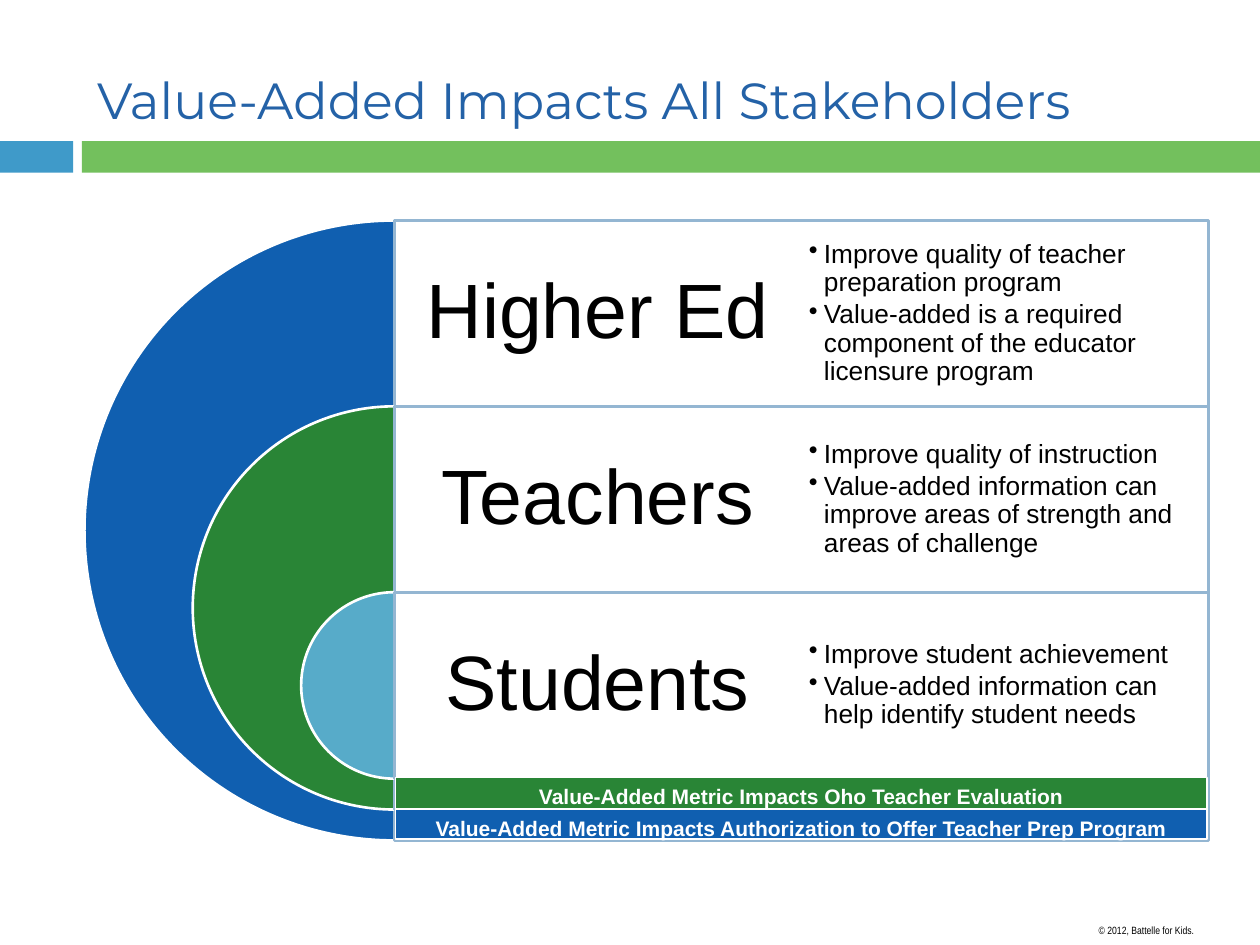
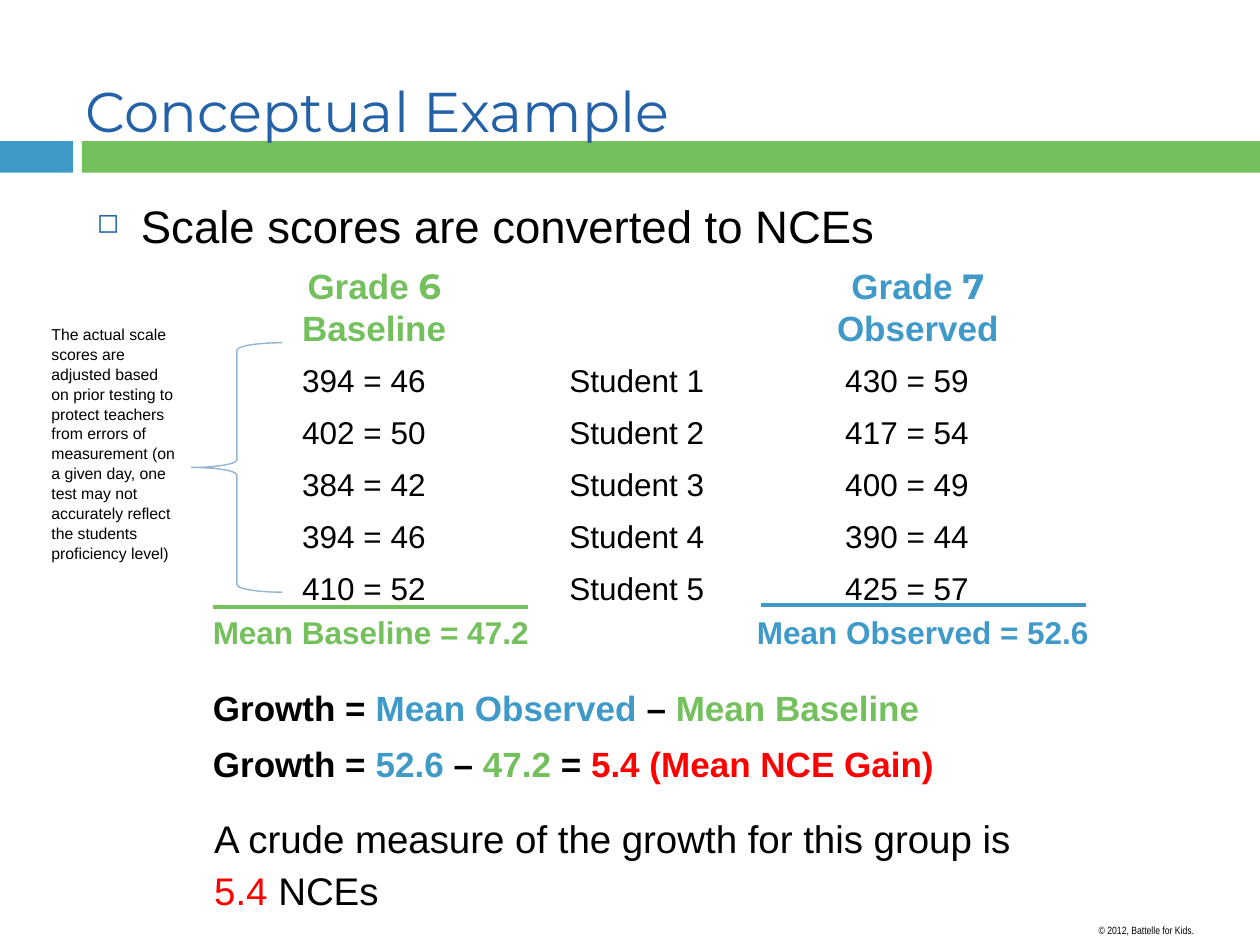
from dataclasses import dataclass, replace
from typing import NamedTuple, Optional

from lxml.etree import SubElement
from pptx import Presentation
from pptx.dml.color import RGBColor
from pptx.enum.shapes import MSO_CONNECTOR, MSO_SHAPE
from pptx.enum.text import MSO_ANCHOR, MSO_AUTO_SIZE, PP_ALIGN
from pptx.oxml.ns import qn
from pptx.util import Inches, Pt

SLIDE_WIDTH, SLIDE_HEIGHT = Inches(10), Inches(7.5)
COLUMN, ROW = SLIDE_WIDTH / 100, SLIDE_HEIGHT / 75

BLACK = RGBColor(0, 0, 0)
WHITE = RGBColor(255, 255, 255)
RED = RGBColor(255, 0, 0)
TITLE_BLUE = RGBColor(0x24, 0x62, 0xA7)
BAND_BLUE = RGBColor(0x3F, 0x9A, 0xC9)
BAND_GREEN = RGBColor(0x73, 0xC0, 0x5D)
DEEP_BLUE = RGBColor(0x10, 0x5F, 0xB0)
DEEP_GREEN = RGBColor(0x29, 0x85, 0x36)
LIGHT_BLUE = RGBColor(0x57, 0xAB, 0xC9)
OUTLINE_BLUE = RGBColor(0x94, 0xB6, 0xD2)


class Box(NamedTuple):
    column: float
    row: float
    columns: float
    rows: float

    def emu(self) -> tuple:
        return (round(self.column * COLUMN), round(self.row * ROW),
                round(self.columns * COLUMN), round(self.rows * ROW))


class Part(NamedTuple):
    text: str
    color: Optional[RGBColor] = None
    font: Optional[str] = None


class Bullet(NamedTuple):
    symbol: str
    indent: float
    color: Optional[RGBColor] = None
    percent: int = 100


class Stakeholder(NamedTuple):
    name: str
    color: RGBColor
    impacts: tuple


class Summary(NamedTuple):
    text: str
    color: RGBColor
    box: Box


class Grade(NamedTuple):
    number: str
    role: str
    mean: str
    color: RGBColor
    heading_box: Box
    mean_box: Box
    rule: tuple


@dataclass(frozen=True)
class Style:
    size: float
    color: RGBColor = BLACK
    bold: bool = False
    font: str = "Arial"
    align: PP_ALIGN = PP_ALIGN.LEFT
    anchor: MSO_ANCHOR = MSO_ANCHOR.TOP
    insets: tuple = (0.1, 0.05, 0.1, 0.05)
    spacing: float = 1.0
    before: float = 0
    after: float = 0
    bullet: Optional[Bullet] = None
    tabs: tuple = ()


FLUSH = (0, 0, 0, 0.05)
TITLE = Style(29, TITLE_BLUE, font="Montserrat", anchor=MSO_ANCHOR.MIDDLE)
COPYRIGHT = Style(6, font="Arial Narrow", insets=(0, 0, 0, 0))
STAKEHOLDER = Style(44, align=PP_ALIGN.CENTER, anchor=MSO_ANCHOR.MIDDLE,
                    insets=(0.18,) * 4, spacing=0.9)
IMPACT = Style(15, anchor=MSO_ANCHOR.MIDDLE, insets=(0.06,) * 4, spacing=0.9,
               after=2.25, bullet=Bullet("•", 0.12))
SUMMARY = Style(12, WHITE, bold=True, align=PP_ALIGN.CENTER)
LEAD = Style(26, spacing=1.05, bullet=Bullet("◻", 0.35, TITLE_BLUE, 60))
SCORES = Style(18, spacing=1.05, before=7, tabs=(2.12, 4.31))
MEAN = Style(18, bold=True, spacing=1.05)
GRADE = Style(20, bold=True, align=PP_ALIGN.CENTER)
GROWTH = Style(20, bold=True, insets=FLUSH, spacing=1.05)
CONCLUSION = Style(22, insets=FLUSH, spacing=1.13)
NOTE = Style(9, spacing=1.05)

CENTER_COLUMN, RIGHT_COLUMN, TOP_ROW = 31.3, 95.9, 17.5
LEVEL_ROWS = 14.75
DIAMETER, DIAMETER_STEP = 49.2, 17.2
HALF_PANEL = (RIGHT_COLUMN - CENTER_COLUMN) / 2

STAKEHOLDERS = (
    Stakeholder("Higher Ed", DEEP_BLUE, (
        "Improve quality of teacher preparation program",
        "Value-added is a required component of the educator licensure program")),
    Stakeholder("Teachers", DEEP_GREEN, (
        "Improve quality of instruction",
        "Value-added information can improve areas of strength and areas of challenge")),
    Stakeholder("Students", LIGHT_BLUE, (
        "Improve student achievement",
        "Value-added information can help identify student needs")),
)
SUMMARIES = (
    Summary("Value-Added Metric Impacts Oho Teacher Evaluation",
            DEEP_GREEN, Box(31.4, 61.7, 64.4, 3)),
    Summary("Value-Added Metric Impacts Authorization to Offer Teacher Prep Program",
            DEEP_BLUE, Box(31.4, 64.2, 64.4, 2.4)),
)
GRADES = (
    Grade("6", "Baseline", "47.2", BAND_GREEN, Box(19.3, 20.5, 20.8, 7.7),
          Box(15.9, 48, 27.5, 4.2), (16.9, 41.9, 48.2)),
    Grade("7", "Observed", "52.6", BAND_BLUE, Box(61.6, 20.5, 22.5, 7.7),
          Box(59.1, 48, 29, 4.2), (60.4, 86.2, 48)),
)
STUDENT_SCORES = (
    ("394 = 46", "430 = 59"),
    ("402 = 50", "417 = 54"),
    ("384 = 42", "400 = 49"),
    ("394 = 46", "390 = 44"),
    ("410 = 52", "425 = 57"),
)
GROWTH_LINES = (
    (Part("Growth = "), Part("Mean Observed ", BAND_BLUE), Part("– "),
     Part("Mean Baseline", BAND_GREEN)),
    (Part("Growth = "), Part("52.6 ", BAND_BLUE), Part("– "), Part("47.2 ", BAND_GREEN),
     Part("= "), Part("5.4 (Mean NCE Gain)", RED)),
)


def add_bullet(properties, bullet: Bullet) -> None:
    indent = Inches(bullet.indent)
    properties.set("marL", str(indent))
    properties.set("indent", str(-indent))
    if bullet.color is not None:
        color = SubElement(properties, qn("a:buClr"))
        SubElement(color, qn("a:srgbClr"), val=str(bullet.color))
    SubElement(properties, qn("a:buSzPct"), val=str(bullet.percent * 1000))
    SubElement(properties, qn("a:buChar"), char=bullet.symbol)


def add_tabs(properties, stops: tuple) -> None:
    tab_list = SubElement(properties, qn("a:tabLst"))
    for stop in stops:
        SubElement(tab_list, qn("a:tab"), pos=str(Inches(stop)), algn="l")


def write(frame, lines, style: Style) -> None:
    frame.word_wrap = True
    frame.auto_size = MSO_AUTO_SIZE.NONE
    frame.vertical_anchor = style.anchor
    (frame.margin_left, frame.margin_top,
     frame.margin_right, frame.margin_bottom) = map(Inches, style.insets)
    for index, line in enumerate(lines):
        paragraph = frame.add_paragraph() if index else frame.paragraphs[0]
        properties = paragraph._p.get_or_add_pPr()
        if style.bullet:
            add_bullet(properties, style.bullet)
        if style.tabs:
            add_tabs(properties, style.tabs)
        paragraph.alignment = style.align
        paragraph.line_spacing = style.spacing
        paragraph.space_before = Pt(style.before if index else 0)
        paragraph.space_after = Pt(style.after)
        paragraph.font.size = Pt(style.size)
        paragraph.font.bold = style.bold
        paragraph.font.name = style.font
        paragraph.font.color.rgb = style.color
        for part in ((Part(line),) if isinstance(line, str) else line):
            run = paragraph.add_run()
            run.text = part.text
            if part.color is not None:
                run.font.color.rgb = part.color
            if part.font:
                run.font.name = part.font


def add_text(slide, box: Box, lines, style: Style):
    text = slide.shapes.add_textbox(*box.emu())
    write(text.text_frame, lines, style)
    return text


def draw(slide, preset: MSO_SHAPE, box: Box, fill: Optional[RGBColor] = None,
         line: Optional[RGBColor] = None, weight: float = 1.5):
    shape = slide.shapes.add_shape(preset, *box.emu())
    shape.shadow.inherit = False
    if fill is None:
        shape.fill.background()
    else:
        shape.fill.solid()
        shape.fill.fore_color.rgb = fill
    if line is None:
        shape.line.fill.background()
    else:
        shape.line.color.rgb = line
        shape.line.width = Pt(weight)
    return shape


def draw_rule(slide, start: float, end: float, row: float, color: RGBColor) -> None:
    x1, y, length, _ = Box(start, row, end - start, 0).emu()
    rule = slide.shapes.add_connector(MSO_CONNECTOR.STRAIGHT, x1, y, x1 + length, y)
    rule.line.color.rgb = color
    rule.line.width = Pt(2.5)
    SubElement(rule._element.spPr, qn("a:effectLst"))


def start_slide(deck, heading: str, box: Box, style: Style):
    slide = deck.slides.add_slide(deck.slide_layouts[5])
    draw(slide, MSO_SHAPE.RECTANGLE, Box(0, 11.2, 5.8, 2.5), BAND_BLUE)
    draw(slide, MSO_SHAPE.RECTANGLE, Box(6.5, 11.2, 93.5, 2.5), BAND_GREEN)
    copyright_line = add_text(slide, Box(87.2, 73.3, 12, 0.8),
                              ["© 2012, Battelle for Kids."], COPYRIGHT)
    title = slide.shapes.title
    title.left, title.top, title.width, title.height = box.emu()
    write(title.text_frame, [heading], style)
    copyright_line.element.addnext(title.element)
    return slide


def draw_level(slide, index: int, stakeholder: Stakeholder) -> None:
    top = TOP_ROW + index * LEVEL_ROWS
    diameter = DIAMETER - index * DIAMETER_STEP
    half_circle = draw(slide, MSO_SHAPE.PIE,
                       Box(CENTER_COLUMN - diameter / 2, top, diameter, diameter),
                       stakeholder.color, WHITE)
    half_circle.adjustments[0], half_circle.adjustments[1] = 54, 162
    panel = draw(slide, MSO_SHAPE.RECTANGLE,
                 Box(CENTER_COLUMN, top, 2 * HALF_PANEL, diameter), WHITE, OUTLINE_BLUE)
    panel_color = panel._element.spPr.find(qn("a:solidFill")).find(qn("a:srgbClr"))
    SubElement(panel_color, qn("a:alpha"), val="90000")
    add_text(slide, Box(CENTER_COLUMN, top, HALF_PANEL, LEVEL_ROWS),
             [stakeholder.name], STAKEHOLDER)
    add_text(slide, Box(CENTER_COLUMN + HALF_PANEL, top, HALF_PANEL, LEVEL_ROWS),
             stakeholder.impacts, IMPACT)


def build_stakeholders(deck) -> None:
    slide = start_slide(deck, "Value-Added Impacts All Stakeholders",
                        Box(6.7, 2.5, 89.2, 10.8), TITLE)
    for index, stakeholder in enumerate(STAKEHOLDERS):
        draw_level(slide, index, stakeholder)
    for summary in SUMMARIES:
        bar = draw(slide, MSO_SHAPE.RECTANGLE, summary.box, summary.color, WHITE, 0.75)
        write(bar.text_frame, [summary.text], SUMMARY)


def build_example(deck) -> None:
    slide = start_slide(deck, "Conceptual Example", Box(5.8, 3.3, 90, 10.8),
                        replace(TITLE, size=32))
    add_text(slide, Box(6.7, 15, 89.2, 5.8), ["Scale scores are converted to NCEs"], LEAD)
    score_lines = [f"{baseline}\tStudent {number}\t{observed}"
                   for number, (baseline, observed) in enumerate(STUDENT_SCORES, 1)]
    add_text(slide, Box(23, 28, 62.5, 20), score_lines, SCORES)
    for grade in GRADES:
        add_text(slide, grade.heading_box,
                 [(Part("Grade "), Part(grade.number, font="Montserrat")), grade.role],
                 replace(GRADE, color=grade.color))
        add_text(slide, grade.mean_box, [f"Mean {grade.role} = {grade.mean}"],
                 replace(MEAN, color=grade.color))
        draw_rule(slide, *grade.rule, grade.color)
    add_text(slide, Box(17, 64.2, 64.5, 8.2),
             [(Part("A crude measure of the growth for this group is "),
               Part("5.4 ", RED), Part("NCEs"))], CONCLUSION)
    for index, growth in enumerate(GROWTH_LINES):
        add_text(slide, Box(16.9, 54.3 + 4.5 * index, 76.7, 3.9), [growth], GROWTH)
    draw(slide, MSO_SHAPE.LEFT_BRACE, Box(15.2, 27.2, 7.2, 19.8),
         line=OUTLINE_BLUE, weight=0.79)
    add_text(slide, Box(3.1, 25.2, 12.1, 19.2),
             ["The actual scale scores are adjusted based on prior testing to protect "
              "teachers from errors of measurement (on a given day, one test may not "
              "accurately reflect the students proficiency level)"], NOTE)


def main() -> None:
    deck = Presentation()
    deck.slide_width, deck.slide_height = SLIDE_WIDTH, SLIDE_HEIGHT
    build_stakeholders(deck)
    build_example(deck)
    deck.save("out.pptx")


if __name__ == "__main__":
    main()
